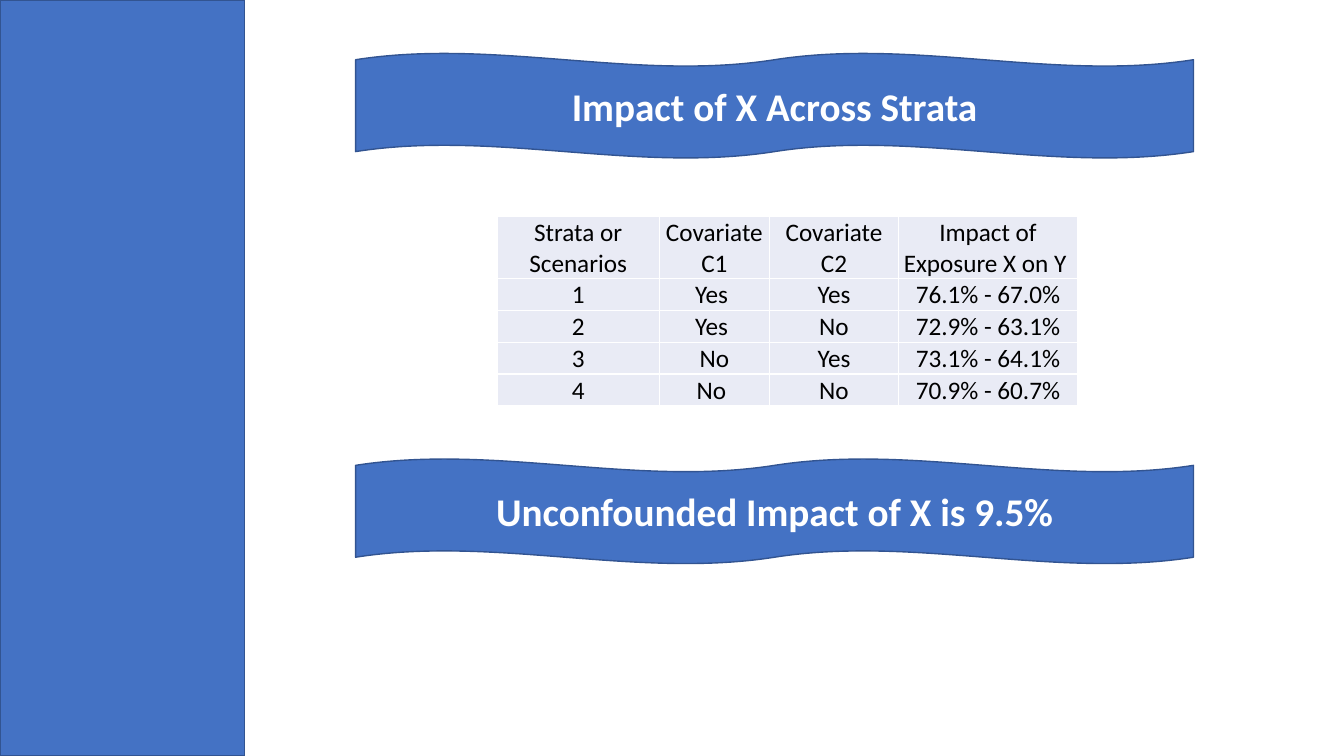
from lxml import etree
from pptx import Presentation
from pptx import util as u
from pptx.dml.color import RGBColor
from pptx.enum import shapes, text
from pptx.oxml import ns

STRATA = [
    ["Strata or Scenarios", "Covariate C1", "Covariate C2", "Impact of Exposure X on Y "],
    ["1", "Yes ", "Yes", "76.1% - 67.0%"],
    ["2", "Yes ", "No", "72.9% - 63.1%"],
    ["3", "No", "Yes", "73.1% - 64.1%"],
    ["4", "No ", "No", "70.9% - 60.7%"],
]


def color(hex_code):
    return RGBColor.from_string(hex_code)


class StrataSlide:
    FONT = "Calibri"
    BLUE, OUTLINE = "4472C4", "325491"
    WHITE, BLACK, CELL = "FFFFFF", "000000", "E9EBF5"

    def __init__(self, slide):
        self.slide = slide

    def label(self, frame, words, size, ink, bold=False):
        """Fill a text frame with one centred line of styled words."""
        frame.text = words
        paragraph = frame.paragraphs[0]
        paragraph.alignment = text.PP_ALIGN.CENTER
        for run in paragraph.runs:
            run.font.name = self.FONT
            run.font.size = u.Pt(size)
            run.font.bold = bold
            run.font.color.rgb = color(ink)

    def block(self, preset, left, top, width, height):
        """Add a blue outlined preset shape."""
        shape = self.slide.shapes.add_shape(
            preset, u.Pt(left), u.Pt(top), u.Pt(width), u.Pt(height))
        shape.shadow.inherit = False
        shape.fill.solid()
        shape.fill.fore_color.rgb = color(self.BLUE)
        shape.line.color.rgb = color(self.OUTLINE)
        shape.line.width = u.Pt(1)
        return shape

    def banner(self, words, top):
        wave = self.block(shapes.MSO_SHAPE.DOUBLE_WAVE, 254, top, 598.5, 75)
        wave.text_frame.vertical_anchor = text.MSO_ANCHOR.MIDDLE
        self.label(wave.text_frame, words, 28, self.WHITE, bold=True)

    def border(self, cell):
        properties = cell._tc.get_or_add_tcPr()
        for side in ("a:lnL", "a:lnR", "a:lnT", "a:lnB"):
            line = etree.SubElement(properties, ns.qn(side), w=str(u.Pt(1)))
            fill = etree.SubElement(line, ns.qn("a:solidFill"))
            etree.SubElement(fill, ns.qn("a:srgbClr"), val=self.WHITE)

    def table(self, rows, left, top, widths, heights):
        grid = self.slide.shapes.add_table(
            len(rows), len(widths), u.Pt(left), u.Pt(top),
            u.Pt(sum(widths)), u.Pt(sum(heights))).table
        grid.first_row = grid.horz_banding = False
        for column, width in zip(grid.columns, widths):
            column.width = u.Pt(width)
        for row, height, entries in zip(grid.rows, heights, rows):
            row.height = u.Pt(height)
            for cell, entry in zip(row.cells, entries):
                cell.margin_left = cell.margin_right = cell.margin_top = u.Pt(0.7)
                cell.margin_bottom = 0
                cell.vertical_anchor = text.MSO_ANCHOR.BOTTOM
                self.border(cell)
                cell.fill.solid()
                cell.fill.fore_color.rgb = color(self.CELL)
                self.label(cell.text_frame, entry, 18, self.BLACK)


def main():
    deck = Presentation()
    deck.slide_width, deck.slide_height = u.Pt(960), u.Pt(540)
    page = StrataSlide(deck.slides.add_slide(deck.slide_layouts[6]))
    page.block(shapes.MSO_SHAPE.RECTANGLE, 0, 0, 174.5, 540)
    page.banner("Impact of X Across Strata", 38)
    page.table(STRATA, 355, 154.5, [116, 78.5, 92.5, 127.5], [44] + [22.4] * 4)
    page.banner("Unconfounded Impact of X is 9.5%", 327.75)
    deck.save("out.pptx")


if __name__ == "__main__":
    main()
